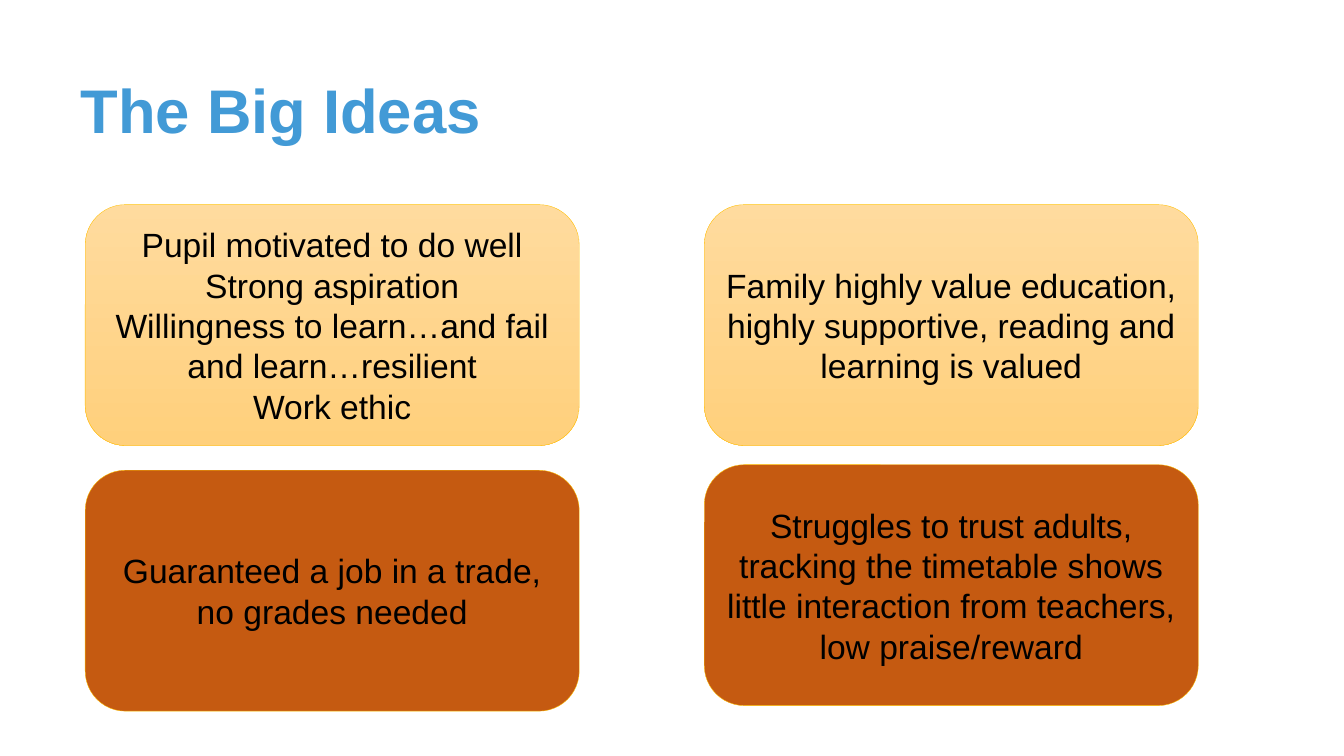
from dataclasses import dataclass

import pptx
import pptx.dml.color
import pptx.enum.shapes
import pptx.enum.text
import pptx.util
from pptx.util import Inches


@dataclass(frozen=True)
class Theme:
    font: str = "Arial"
    title_size: int = 88
    body_size: int = 48
    title: str = "429AD6"
    text: str = "000000"
    outline: str = "FFC000"
    light: tuple = ("FFDB9E", "FFD07C")
    dark: tuple = ("C55A11",)


theme = Theme()


def rgb(code):
    return pptx.dml.color.RGBColor.from_string(code)


def add_text(tf, lines, size, color, align, bold=False):
    """Fill a text frame with one paragraph per line, centred vertically."""
    tf.word_wrap = True
    tf.vertical_anchor = pptx.enum.text.MSO_ANCHOR.MIDDLE
    for i, line in enumerate(lines):
        p = tf.add_paragraph() if i else tf.paragraphs[0]
        p.alignment = align
        r = p.add_run()
        r.text = line
        r.font.name = theme.font
        r.font.size = pptx.util.Pt(size)
        r.font.bold = bold
        r.font.color.rgb = rgb(color)


prs = pptx.Presentation()
prs.slide_width, prs.slide_height = Inches(26.66), Inches(15)
s = prs.slides.add_slide(prs.slide_layouts[6])

# Title
title = s.shapes.add_textbox(Inches(1.5), Inches(0.8), Inches(23.33), Inches(2.9))
add_text(title.text_frame, ["The Big Ideas"], theme.title_size, theme.title,
         pptx.enum.text.PP_ALIGN.LEFT, bold=True)
title.text_frame.paragraphs[0].line_spacing = 0.9

# Idea cards: strengths above, barriers below
left_col, right_col = 1.69, 13.97
card_w, card_h = 9.8, 4.78
cards = [
    (left_col, 4.06, theme.light, [
        "Pupil motivated to do well",
        "Strong aspiration",
        "Willingness to learn…and fail and learn…resilient",
        "Work ethic",
    ]),
    (right_col, 4.06, theme.light, [
        "Family highly value education, highly supportive, reading and learning is valued",
    ]),
    (left_col, 9.33, theme.dark, ["Guaranteed a job in a trade, no grades needed"]),
    (right_col, 9.22, theme.dark, [
        "Struggles to trust adults, tracking the timetable shows little interaction "
        "from teachers, low praise/reward",
    ]),
]
for x, y, colors, lines in cards:
    sp = s.shapes.add_shape(pptx.enum.shapes.MSO_SHAPE.ROUNDED_RECTANGLE,
                            Inches(x), Inches(y), Inches(card_w), Inches(card_h))
    sp.shadow.inherit = False
    if len(colors) > 1:
        sp.fill.gradient()
        sp.fill.gradient_angle = 270
        for stop, color, position in zip(sp.fill.gradient_stops, colors, (0, 1)):
            stop.color.rgb = rgb(color)
            stop.position = position
    else:
        sp.fill.solid()
        sp.fill.fore_color.rgb = rgb(colors[0])
    sp.line.color.rgb = rgb(theme.outline)
    sp.line.width = pptx.util.Pt(0.5)
    add_text(sp.text_frame, lines, theme.body_size, theme.text,
             pptx.enum.text.PP_ALIGN.CENTER)

prs.save("out.pptx")
